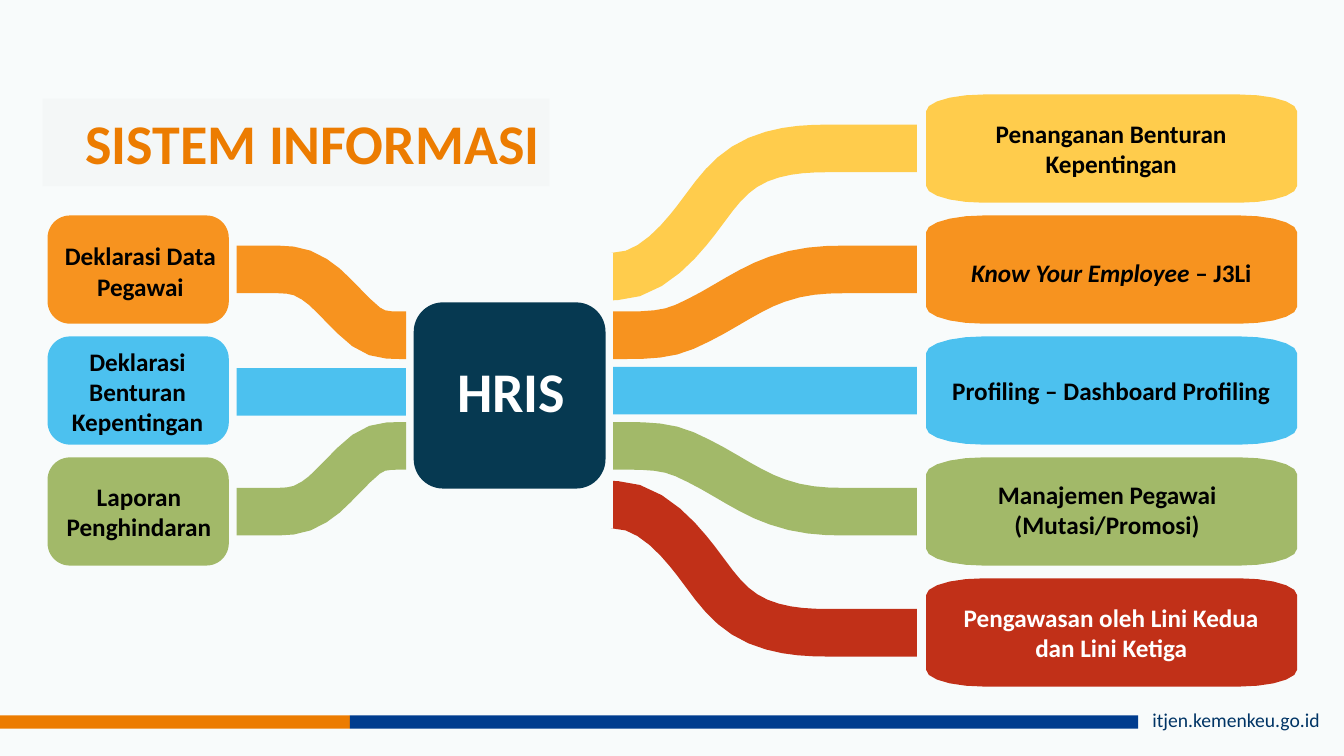
from math import ceil, cos, dist, pi, sin

from pptx import Presentation
from pptx.dml.color import RGBColor
from pptx.enum.shapes import MSO_SHAPE as Shape
from pptx.enum.text import MSO_ANCHOR as Anchor, PP_ALIGN as Align
from pptx.util import Pt

# Content: (row, fill, text box, text colour, paragraphs of (text, italic) runs)
ORANGE, BLUE, GREEN, RED, YELLOW = "F7931F", "4CC1EF", "A2B969", "C13018", "FFCC4C"
BLACK, WHITE = "000000", "FFFFFF"
INPUTS = [
    (1, ORANGE, (43, 168, 114.5, 51), BLACK, [[("Deklarasi Data Pegawai", False)]]),
    (2, BLUE, (41, 243.5, 114.5, 72.5), BLACK, [[("Deklarasi Benturan Kepentingan", False)]]),
    (3, GREEN, (43, 340, 112.5, 51), BLACK, [[("Laporan Penghindaran", False)]]),
]
OUTPUTS = [
    (0, YELLOW, (671, 80.5, 245.5, 51), BLACK, [[("Penanganan Benturan Kepentingan", False)]]),
    (1, ORANGE, (671, 180, 245.5, 29), BLACK,
     [[("Know Your Employee ", True), ("– J3Li", False)]]),
    (2, BLUE, (671, 264.5, 245.5, 29), BLACK, [[("Profiling – Dashboard Profiling", False)]]),
    (3, GREEN, (668, 338.5, 245.5, 51), BLACK, [[("Manajemen Pegawai (Mutasi/Promosi)", False)]]),
    (4, RED, (671, 426, 245.5, 51), WHITE,
     [[("Pengawasan oleh Lini Kedua", False)], [("dan Lini Ketiga", False)]]),
]

# Rows of boxes, and the wide corners of the output boxes
ROW_TOP, ROW_STEP, BOX_HEIGHT = 67.5, 86.4, 77.3
CORNER_WIDTH, CORNER_HEIGHT, CORNER_STEPS = 41, 12, 5

# Ribbon centre lines: upper colour, mirrored colour, start, segments (line or cubic)
RIBBON_WIDTH, MIRROR_Y, STEP_LENGTH = 34, 279, 12
RIBBONS = [
    (ORANGE, GREEN, (169, 192.5), [
        [(199, 192.5)],
        [(207, 192.5), (216, 193.5), (224.5, 199.5)],
        [(232, 204), (238, 211), (245, 218)],
        [(249.5, 223), (256, 229), (261.5, 233.5)],
        [(269, 239.5), (278, 239.5), (286, 239.5)],
        [(290, 239.5)]]),
    (ORANGE, GREEN, (438, 239.5), [
        [(446.5, 239.5)],
        [(463.5, 239.5), (476.5, 239), (489, 233.5)],
        [(499, 229), (508.5, 224), (518.5, 218)],
        [(530.5, 211), (542, 204), (555, 199.5)],
        [(571.5, 193.5), (587.5, 192.5), (602, 192.5)],
        [(655, 192.5)]]),
    (YELLOW, RED, (438, 197.5), [
        [(439, 197.5)],
        [(466, 197.5), (488, 169), (497, 157.5)],
        [(504.5, 147.5)],
        [(514, 134.5), (524, 121.5), (541.5, 114)],
        [(562, 105.5), (581.5, 106), (601, 106)],
        [(655, 106)]]),
]

presentation = Presentation()
presentation.slide_width, presentation.slide_height = Pt(960), Pt(540)
slide = presentation.slides.add_slide(presentation.slide_layouts[6])


def color(value):
    return RGBColor.from_string(value)


def paint(shape, fill):
    shape.shadow.inherit = False
    shape.fill.solid()
    shape.fill.fore_color.rgb = color(fill)
    shape.line.fill.background()


def add_box(box, fill, radius=0):
    kind = Shape.ROUNDED_RECTANGLE if radius else Shape.RECTANGLE
    shape = slide.shapes.add_shape(kind, *map(Pt, box))
    if radius:
        shape.adjustments[0] = radius / min(box[2:])
    paint(shape, fill)
    return shape


def add_outline(points, fill):
    corners = [(Pt(x), Pt(y)) for x, y in points]
    builder = slide.shapes.build_freeform(*corners[0], scale=1.0)
    builder.add_line_segments(corners[1:], close=True)
    paint(builder.convert_to_shape(), fill)


def wide_corner_outline(left, top, width, height):
    points = []
    for quarter in range(4):
        center_x = left + (width - CORNER_WIDTH if quarter in (0, 3) else CORNER_WIDTH)
        center_y = top + (height - CORNER_HEIGHT if quarter < 2 else CORNER_HEIGHT)
        for step in range(CORNER_STEPS + 1):
            angle = (quarter + step / CORNER_STEPS) * pi / 2
            points.append((center_x + CORNER_WIDTH * cos(angle),
                           center_y + CORNER_HEIGHT * sin(angle)))
    return points


def curve_point(controls, t):
    while len(controls) > 1:
        controls = [(ax + (bx - ax) * t, ay + (by - ay) * t)
                    for (ax, ay), (bx, by) in zip(controls, controls[1:])]
    return controls[0]


def ribbon_outline(start, segments):
    center = [start]
    for segment in segments:
        controls = [center[-1], *segment]
        steps = 1 if len(segment) == 1 else ceil(dist(controls[0], controls[-1]) / STEP_LENGTH)
        center += [curve_point(controls, step / steps) for step in range(1, steps + 1)]
    upper, lower = [], []
    for index, (x, y) in enumerate(center):
        before, after = center[max(index - 1, 0)], center[min(index + 1, len(center) - 1)]
        factor = RIBBON_WIDTH / 2 / dist(before, after)
        shift_x, shift_y = (after[1] - before[1]) * factor, (after[0] - before[0]) * factor
        upper.append((x + shift_x, y - shift_y))
        lower.append((x - shift_x, y + shift_y))
    return upper + lower[::-1]


def write(shape, paragraphs, size=18, fill=BLACK, bold=True, align=Align.CENTER,
          anchor=Anchor.MIDDLE, side_margin=0):
    frame = shape.text_frame
    frame.word_wrap = True
    frame.vertical_anchor = anchor
    frame.margin_left = frame.margin_right = Pt(side_margin)
    for index, runs in enumerate(paragraphs):
        paragraph = frame.add_paragraph() if index else frame.paragraphs[0]
        paragraph.alignment = align
        for text, italic in runs:
            run = paragraph.add_run()
            run.text = text
            font = run.font
            font.name, font.size, font.bold, font.italic = "Calibri", Pt(size), bold, italic
            font.color.rgb = color(fill)


def add_text(box, paragraphs, **style):
    write(slide.shapes.add_textbox(*map(Pt, box)), paragraphs, **style)


# Background, footer and title
slide.background.fill.solid()
slide.background.fill.fore_color.rgb = color("F8FBFB")
add_box((0, 511, 250, 9.5), "EC7C01")
add_box((250, 511, 563, 9.5), "003C8E")
add_text((816, 502, 140, 24.5), [[("itjen.kemenkeu.go.id", False)]], size=14, fill="003465",
         bold=False, align=Align.LEFT, anchor=Anchor.TOP, side_margin=7.2)
title = add_box((30.5, 70.5, 362, 62.5), "F4F7F7")
write(title, [[("SISTEM INFORMASI", False)]], size=40, fill="EC7C01",
      align=Align.RIGHT, side_margin=7.2)

# Ribbons: each upper one has a mirrored lower one, with a straight band between
for upper_fill, lower_fill, start, segments in RIBBONS:
    outline = ribbon_outline(start, segments)
    add_outline(outline, upper_fill)
    add_outline([(x, 2 * MIRROR_Y - y) for x, y in outline], lower_fill)
add_box((169, 263, 121, RIBBON_WIDTH), BLUE)
add_box((438, 262, 217, RIBBON_WIDTH), BLUE)

# Input and output boxes
for row, fill, *_ in INPUTS:
    add_box((34, ROW_TOP + row * ROW_STEP, 129.5, BOX_HEIGHT), fill, radius=16)
for row, fill, *_ in OUTPUTS:
    add_outline(wide_corner_outline(661.5, ROW_TOP + row * ROW_STEP, 265, BOX_HEIGHT), fill)
for _, _, text_box, text_fill, paragraphs in INPUTS + OUTPUTS:
    add_text(text_box, paragraphs, fill=text_fill)

# Hub
add_box((295.5, 216, 137, 133), "063951", radius=21)
add_text((311, 250.5, 108.5, 55.5), [[("HRIS", False)]], size=40, fill=WHITE,
         anchor=Anchor.BOTTOM)

presentation.save("out.pptx")
